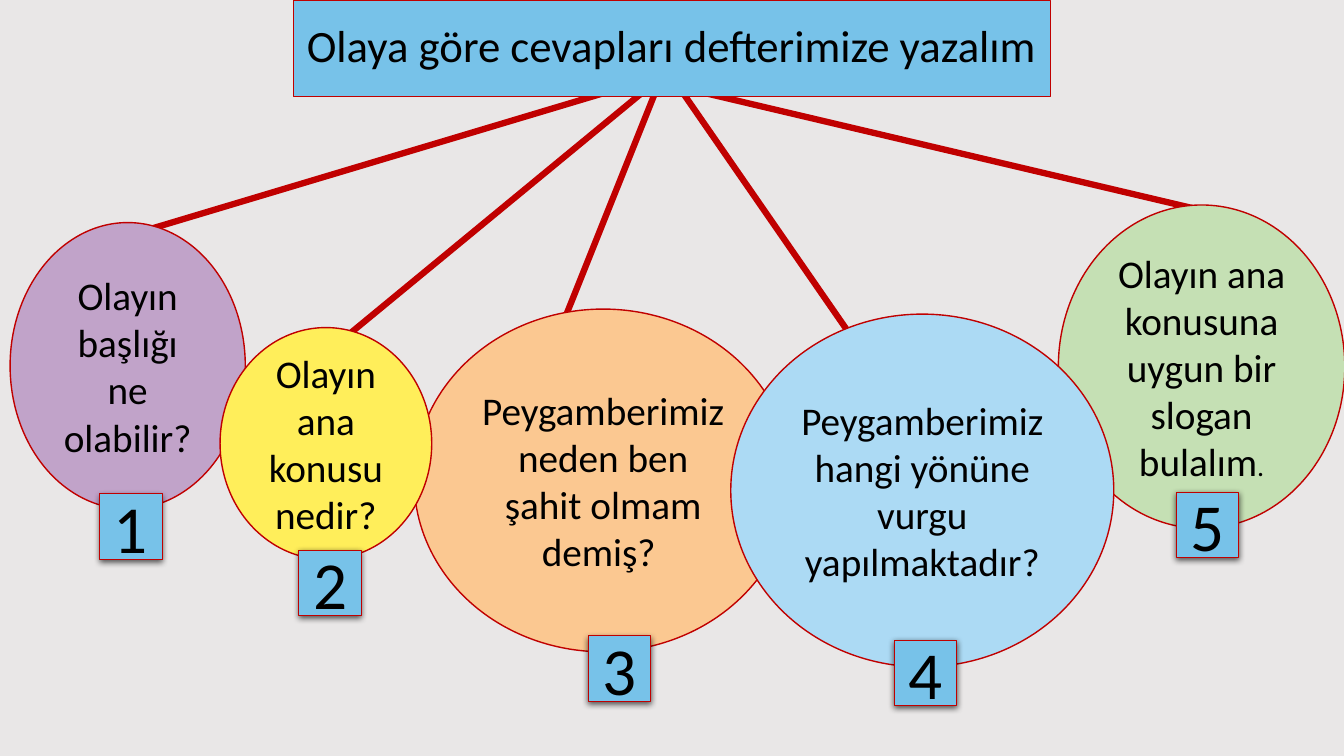
from collections import namedtuple

from lxml.etree import SubElement
from pptx import Presentation
from pptx.dml.color import RGBColor
from pptx.enum.shapes import MSO_CONNECTOR as Connector, MSO_SHAPE as Shape
from pptx.enum.text import MSO_ANCHOR as Anchor, PP_ALIGN as Align
from pptx.oxml.ns import qn
from pptx.util import Inches, Pt

CELL = Inches(1) / 12
COLORS = {
    "background": "E9E7E7",
    "outline": "C00000",
    "text": "000000",
    "panel": "77C2E9",
    "purple": "C1A3C9",
    "yellow": "FFEE5A",
    "orange": "FBC891",
    "blue": "ACDAF4",
    "green": "C5E0B4",
}
Box = namedtuple("Box", "col row cols rows")
Question = namedtuple("Question", "number box color runs arrow_start arrow_end badge_shift badge_overlap")

TITLE_BOX = Box(34.9, 0, 90.1, 11.5)
BADGE_COLS, BADGE_ROWS = 7.4, 7.8
QUESTIONS = [
    Question(1, Box(1.2, 26.5, 28, 34.1), "purple",
             [("Olayın başlığı ne olabilir?", 28)],
             (15.1, 28.1), (78.5, 9.1), 0.4, 1.8),
    Question(3, Box(49.3, 36.8, 45, 40.8), "orange",
             [("Peygamberimiz neden ben şahit olmam demiş? ", 28)],
             (66.8, 39), (79.7, 6.8), 2, 1.9),
    Question(5, Box(126, 24.4, 34.1, 38.5), "green",
             [("Olayın ana konusuna uygun bir slogan bulalım", 28), (".", 20)],
             (144.2, 25.3), (78.5, 9.8), 0.7, 4.3),
    Question(4, Box(87, 37.4, 45.6, 42), "blue",
             [("Peygamberimiz hangi yönüne vurgu yapılmaktadır?", 28)],
             (101.6, 40.4), (78.7, 7.3), 0.4, 3.2),
    Question(2, Box(26.2, 39, 25.2, 27.6), "yellow",
             [("Olayın ana konusu nedir?", 28)],
             (37.3, 43.3), (79.9, 8.2), 0.5, 1.1),
]


def rgb(name):
    """Return the named colour."""
    return RGBColor.from_string(COLORS[name])


def cells(*counts):
    """Convert grid counts to lengths."""
    return [round(count * CELL) for count in counts]


def write(frame, runs, font="Calibri", color="text", spacing=None):
    """Write centred runs of (text, size) into a text frame."""
    frame.word_wrap = True
    frame.vertical_anchor = Anchor.MIDDLE
    paragraph = frame.paragraphs[0]
    paragraph.alignment = Align.CENTER
    paragraph.line_spacing = spacing
    for text, size in runs:
        run = paragraph.add_run()
        run.text = text
        run.font.name = font
        run.font.size = Pt(size)
        run.font.color.rgb = rgb(color)


def add_panel(slide, box, preset, runs, fill, line_width, spacing=None):
    """Add an outlined, filled shape with text."""
    panel = slide.shapes.add_shape(preset, *cells(*box))
    panel.shadow.inherit = False
    panel.fill.solid()
    panel.fill.fore_color.rgb = rgb(fill)
    panel.line.color.rgb = rgb("outline")
    panel.line.width = Pt(line_width)
    write(panel.text_frame, runs, spacing=spacing)
    return panel


def add_arrow(slide, start, end):
    """Add a thick arrow from a bubble to the title."""
    arrow = slide.shapes.add_connector(Connector.STRAIGHT, *cells(*start, *end))
    arrow.line.color.rgb = rgb("outline")
    arrow.line.width = Pt(4.5)
    SubElement(arrow.line._get_or_add_ln(), qn("a:tailEnd"), type="triangle")
    SubElement(arrow._element.spPr, qn("a:effectLst"))


def add_badge(slide, question):
    """Add a shadowed number at the bottom of a question's bubble."""
    bubble = question.box
    box = Box(bubble.col + (bubble.cols - BADGE_COLS) / 2 + question.badge_shift,
              bubble.row + bubble.rows - question.badge_overlap,
              BADGE_COLS, BADGE_ROWS)
    badge = add_panel(slide, box, Shape.RECTANGLE, [(str(question.number), 48)], "panel", 0.75)
    effects = badge._element.spPr.find(qn("a:effectLst"))
    shadow = SubElement(effects, qn("a:outerShdw"), blurRad=str(Pt(4.5)),
                        dist=str(Pt(1.5)), dir="5400000", algn="ctr", rotWithShape="0")
    tint = SubElement(shadow, qn("a:srgbClr"), val=COLORS["text"])
    SubElement(tint, qn("a:alpha"), val="63000")


def build_question_map(slide):
    """Lay out arrows, bubbles, title and badges from back to front."""
    for question in QUESTIONS:
        add_arrow(slide, question.arrow_start, question.arrow_end)
    for question in QUESTIONS:
        add_panel(slide, question.box, Shape.OVAL, question.runs, question.color, 1)
    add_panel(slide, TITLE_BOX, Shape.RECTANGLE,
              [("Olaya göre cevapları defterimize yazalım", 32)], "panel", 0.5, spacing=0.9)
    for question in sorted(QUESTIONS):
        add_badge(slide, question)


def main():
    """Build and save the slide."""
    deck = Presentation()
    deck.slide_width, deck.slide_height = cells(160, 90)
    slide = deck.slides.add_slide(deck.slide_layouts[6])
    slide.background.fill.solid()
    slide.background.fill.fore_color.rgb = rgb("background")
    build_question_map(slide)
    deck.save("out.pptx")


if __name__ == "__main__":
    main()
